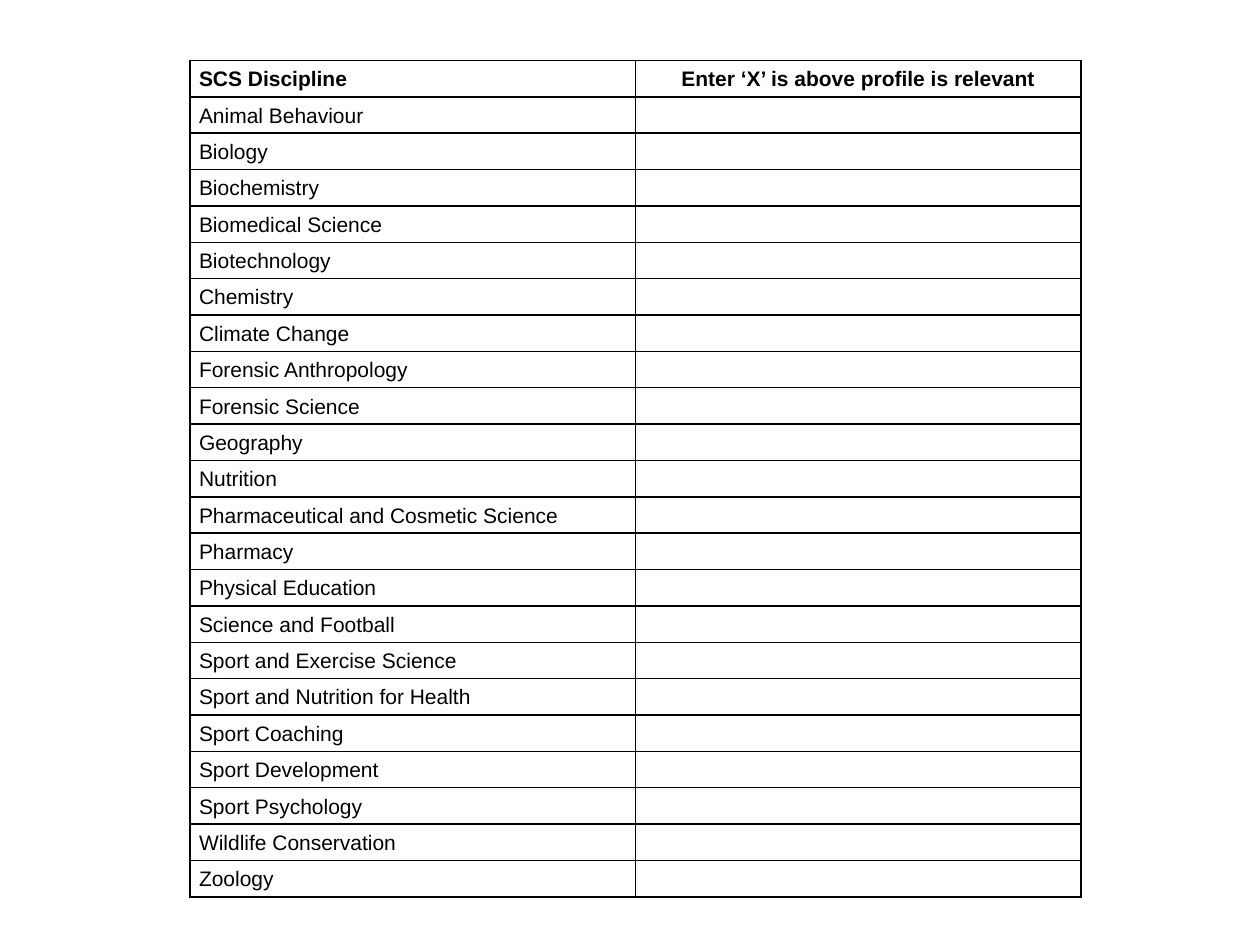
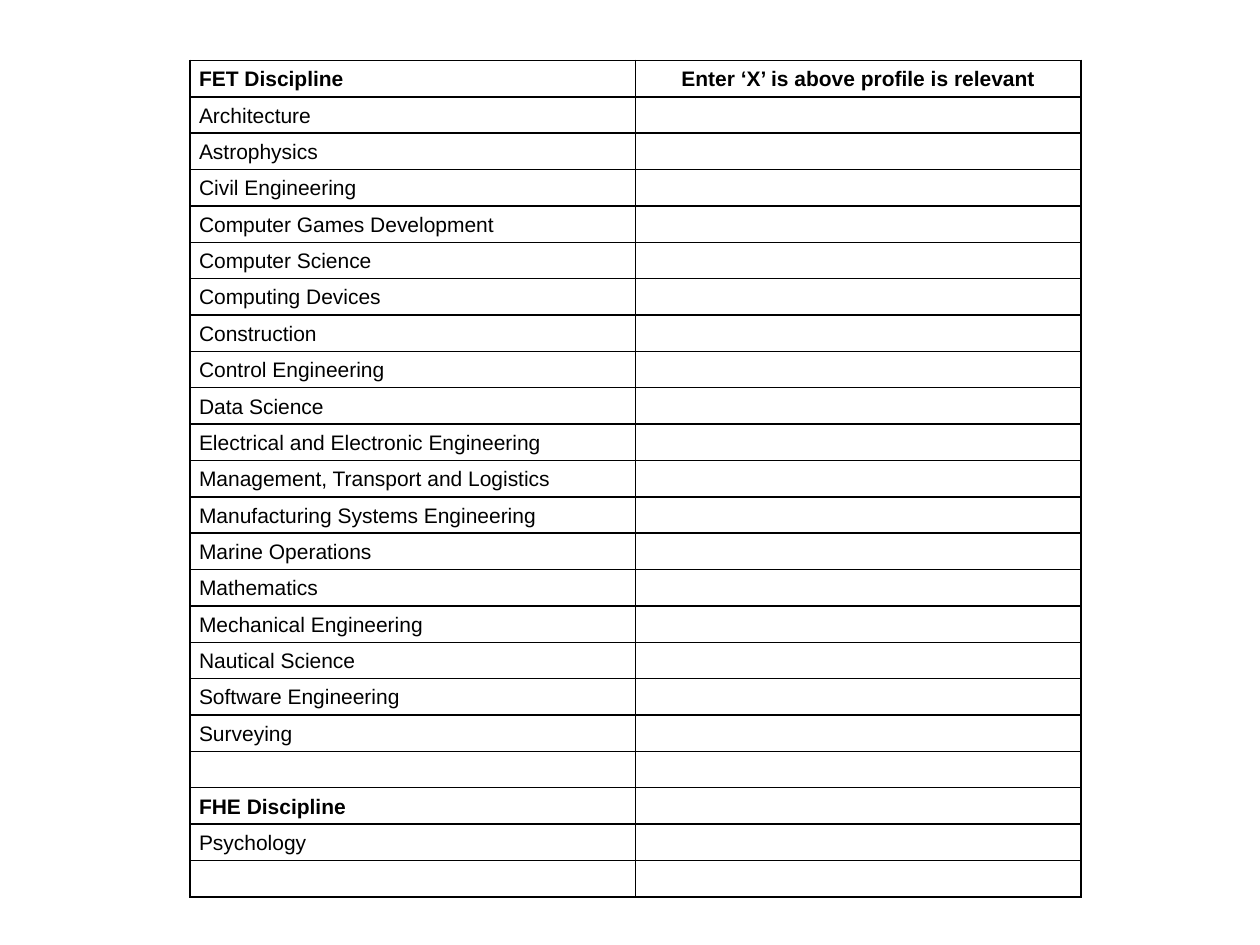
from lxml import etree
from pptx import Presentation
from pptx import util as u
from pptx.dml import color
from pptx.enum import text
from pptx.oxml import ns

BLACK, WHITE = "000000", "FFFFFF"
FONT, FONT_SIZE = "Arial", u.Pt(12)
TABLE_BOX = [u.Inches(value) for value in (1.51, 0.48, 7.07, 6.64)]
CELL_FORMAT = {
    "margin_left": u.Inches(0.07),
    "margin_right": u.Inches(0.07),
    "margin_top": 0,
    "margin_bottom": 0,
    "vertical_anchor": text.MSO_ANCHOR.MIDDLE,
}
TABLE_FORMAT = {"first_row": False, "horz_banding": False}
MARK_HEADING = "Enter ‘X’ is above profile is relevant"

SCS_ROWS = [
    "SCS Discipline", "Animal Behaviour", "Biology", "Biochemistry",
    "Biomedical Science", "Biotechnology", "Chemistry", "Climate Change",
    "Forensic Anthropology", "Forensic Science", "Geography", "Nutrition",
    "Pharmaceutical and Cosmetic Science", "Pharmacy", "Physical Education",
    "Science and Football", "Sport and Exercise Science",
    "Sport and Nutrition for Health", "Sport Coaching", "Sport Development",
    "Sport Psychology", "Wildlife Conservation", "Zoology",
]
FET_FHE_ROWS = [
    "FET Discipline", "Architecture", "Astrophysics", "Civil Engineering",
    "Computer Games Development", "Computer Science", "Computing Devices",
    "Construction", "Control Engineering", "Data Science",
    "Electrical and Electronic Engineering",
    "Management, Transport and Logistics",
    "Manufacturing Systems Engineering", "Marine Operations", "Mathematics",
    "Mechanical Engineering", "Nautical Science", "Software Engineering",
    "Surveying", "", "FHE Discipline", "Psychology", "",
]


def rgb(value):
    return color.RGBColor.from_string(value)


def apply_format(target, values):
    for name, value in values.items():
        setattr(target, name, value)


def add_borders(cell):
    properties = cell._tc.get_or_add_tcPr()
    for position, side in enumerate(("lnL", "lnR", "lnT", "lnB")):
        line = etree.Element(ns.qn(f"a:{side}"), w=str(u.Pt(1)))
        fill = etree.SubElement(line, ns.qn("a:solidFill"))
        etree.SubElement(fill, ns.qn("a:srgbClr"), val=BLACK)
        properties.insert(position, line)


def write_cell(cell, words, bold=False, align=None):
    apply_format(cell, CELL_FORMAT)
    cell.fill.solid()
    cell.fill.fore_color.rgb = rgb(WHITE)
    add_borders(cell)
    para = cell.text_frame.paragraphs[0]
    apply_format(para, {"alignment": align, "line_spacing": 1.07})
    if words:
        span = para.add_run()
        span.text = words
        apply_format(span.font, {"name": FONT, "size": FONT_SIZE, "bold": bold})
        span.font.color.rgb = rgb(BLACK)
    else:
        size = str(int(FONT_SIZE.pt * 100))
        etree.SubElement(para._p, ns.qn("a:endParaRPr"), sz=size)


def add_discipline_table(page, box, disciplines):
    left, top, width, height = box
    table = page.shapes.add_table(len(disciplines), 2, left, top, width, height).table
    apply_format(table, TABLE_FORMAT)
    for row, discipline in enumerate(disciplines):
        write_cell(table.cell(row, 0), discipline, discipline.endswith(" Discipline"))
        mark = MARK_HEADING if row == 0 else ""
        write_cell(table.cell(row, 1), mark, True, text.PP_ALIGN.CENTER)


def main():
    deck = Presentation()
    apply_format(deck, {"slide_width": u.Inches(10), "slide_height": u.Inches(7.5)})
    for disciplines in (SCS_ROWS, FET_FHE_ROWS):
        page = deck.slides.add_slide(deck.slide_layouts[6])
        add_discipline_table(page, TABLE_BOX, disciplines)
    deck.save("out.pptx")


if __name__ == "__main__":
    main()
